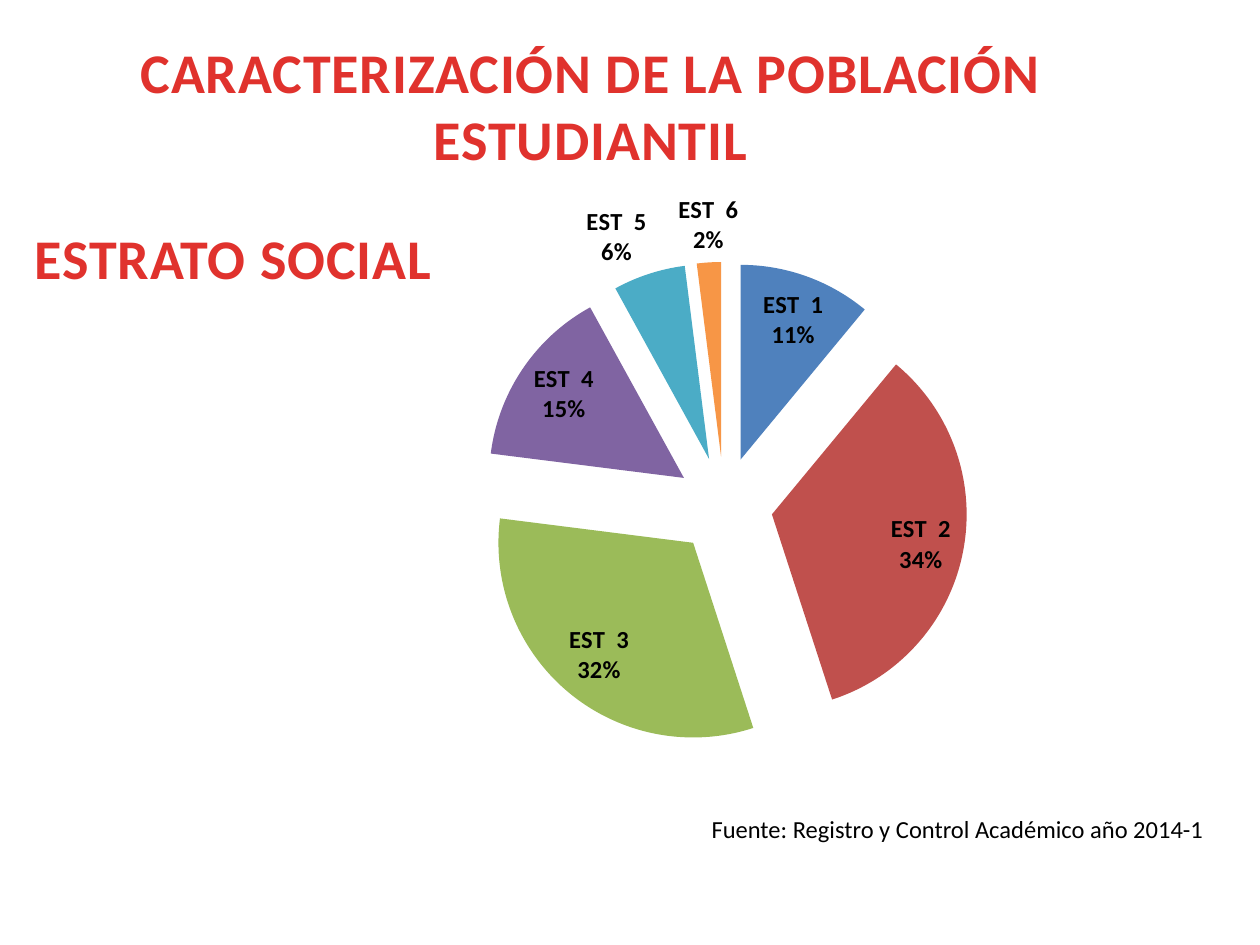
"""Build the slide on the social stratum of the student population."""
import pptx
import pptx.chart.data
import pptx.dml.color
import pptx.enum.chart
import pptx.enum.text
import pptx.oxml
import pptx.util

Pt = pptx.util.Pt
ALIGN = pptx.enum.text.PP_ALIGN

COLORS = {"heading": "E0322D", "text": "000000", "panel": "FFFFFF"}
STRATA = [
    ("EST  1", 11, "4F81BD"),
    ("EST  2", 34, "C0504D"),
    ("EST  3", 32, "9BBB59"),
    ("EST  4", 15, "8064A2"),
    ("EST  5", 6, "4BACC6"),
    ("EST  6", 2, "F79646"),
]
HEADING = {"size": 32, "bold": True, "color": "heading", "align": ALIGN.CENTER}
SOURCE = {"size": 14, "bold": False, "color": "text", "align": ALIGN.LEFT}
TEXTS = [
    ("CARACTERIZACIÓN DE LA POBLACIÓN\nESTUDIANTIL", (11.5, 18, 652, 85), True, HEADING),
    ("ESTRATO SOCIAL", (11.5, 124, 243.5, 46), False, HEADING),
    ("Fuente: Registro y Control Académico año 2014-1", (399.5, 461.5, 320.5, 24.5), True, SOURCE),
]
CHART_BOX = (112.5, 101.5, 579.5, 337.5)
PIE_AREA = {"x": 0.28, "y": 0.14, "w": 0.48, "h": 0.83}
EXPLOSION = 25
CHART_NS = 'xmlns:c="http://schemas.openxmlformats.org/drawingml/2006/chart"'


def rgb(name):
    return pptx.dml.color.RGBColor.from_string(COLORS.get(name, name))


def style_font(font, size, bold, color):
    font.name = "Calibri"
    font.size = Pt(size)
    font.bold = bold
    font.color.rgb = rgb(color)


def add_text(slide, text, box, wrap, style):
    caption = slide.shapes.add_textbox(*map(Pt, box))
    frame = caption.text_frame
    frame.word_wrap = wrap
    frame.text = text
    for paragraph in frame.paragraphs:
        paragraph.alignment = style["align"]
        for run in paragraph.runs:
            style_font(run.font, style["size"], style["bold"], style["color"])
            if style is HEADING:
                run.font._element.set("spc", "50")
    return caption


def add_pie(slide):
    strata_data = pptx.chart.data.CategoryChartData()
    strata_data.categories = [name for name, _, _ in STRATA]
    strata_data.add_series("Series 1", [share for _, share, _ in STRATA])
    pie = slide.shapes.add_chart(
        pptx.enum.chart.XL_CHART_TYPE.PIE, *map(Pt, CHART_BOX), strata_data
    ).chart
    pie.has_legend = False
    pie.has_title = False
    style_font(pie.font, 14, True, "text")
    pie.plots[0].vary_by_categories = True

    series = pie.plots[0].series[0]
    series._element.find("{*}tx").addnext(
        pptx.oxml.parse_xml(f'<c:explosion {CHART_NS} val="{EXPLOSION}"/>')
    )
    for index, (_, _, color) in enumerate(STRATA):
        fill = series.points[index].format.fill
        fill.solid()
        fill.fore_color.rgb = rgb(color)

    labels = series.data_labels
    labels.show_category_name = True
    labels.show_percentage = True
    labels.show_value = False
    labels.position = pptx.enum.chart.XL_LABEL_POSITION.BEST_FIT
    style_font(labels.font, 14, True, "text")
    labels._element.find("{*}showBubbleSize").addnext(
        pptx.oxml.parse_xml(f"<c:separator {CHART_NS}>\n</c:separator>")
    )

    plot_area = pie._chartSpace.chart.plotArea
    for old_layout in plot_area.findall("{*}layout"):
        plot_area.remove(old_layout)
    edges = "".join(f'<c:{key} val="{value}"/>' for key, value in PIE_AREA.items())
    plot_area.insert(0, pptx.oxml.parse_xml(
        f'<c:layout {CHART_NS}><c:manualLayout><c:layoutTarget val="inner"/>'
        f'<c:xMode val="edge"/><c:yMode val="edge"/>{edges}</c:manualLayout></c:layout>'
    ))


def main():
    deck = pptx.Presentation()
    deck.slide_width, deck.slide_height = Pt(720), Pt(540)
    slide = deck.slides.add_slide(deck.slide_layouts[6])
    for text, box, wrap, style in TEXTS:
        caption = add_text(slide, text, box, wrap, style)
        if style is SOURCE:
            caption.fill.solid()
            caption.fill.fore_color.rgb = rgb("panel")
    add_pie(slide)
    deck.save("out.pptx")


if __name__ == "__main__":
    main()
